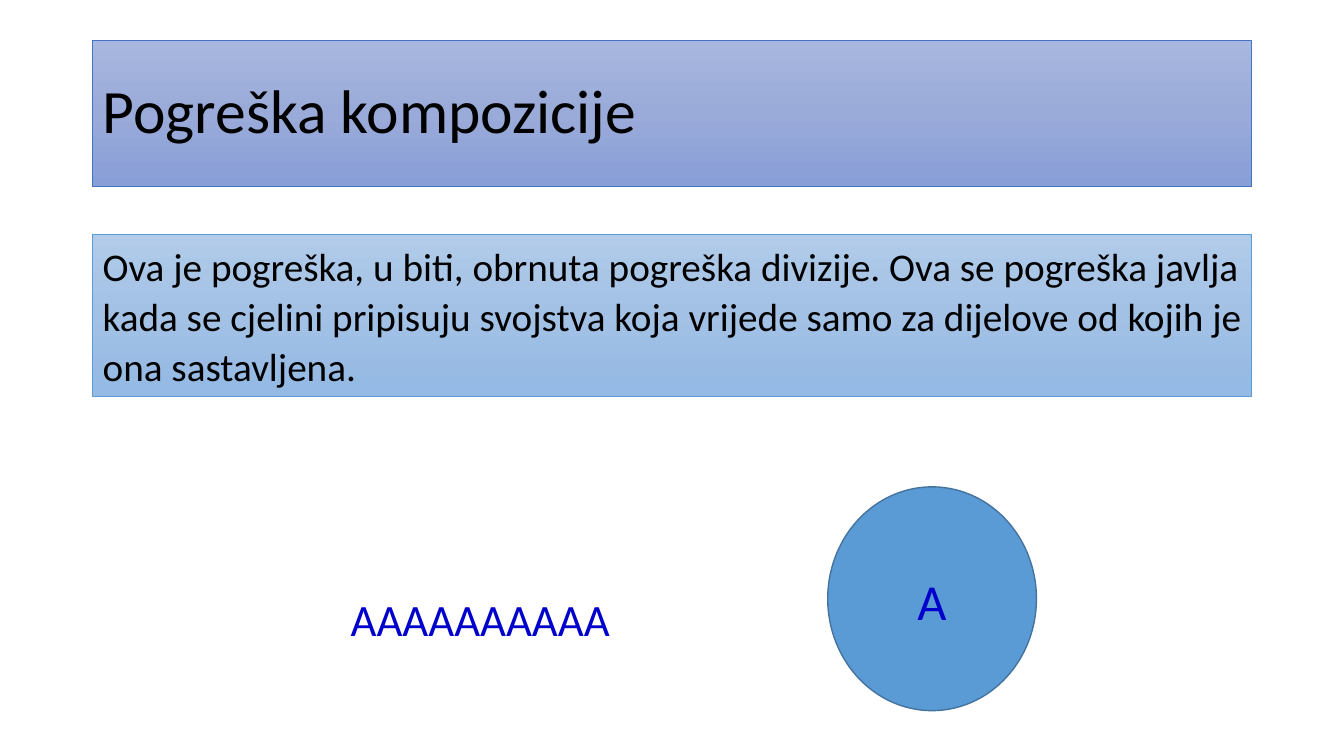
import copy

import pptx
import pptx.dml.color
import pptx.enum.shapes
import pptx.enum.text
import pptx.util

SLIDE_W, SLIDE_H = 13.33, 7.5
MARGIN = 0.92
CONTENT_W = SLIDE_W - 2 * MARGIN
FONT = "Calibri"
COLORS = {
    "text": "000000",
    "letter": "0000CC",
    "title_line": "4472C4",
    "definition_line": "5B9BD5",
    "whole": "5B9BD5",
    "whole_line": "43739E",
}
GRADIENTS = {
    "title": ("A8B7DF", "9AABD9", "889ED7"),
    "definition": ("B1CBE9", "A3C1E5", "93B9E4"),
}
ALIGN = pptx.enum.text.PP_ALIGN
ANCHOR = pptx.enum.text.MSO_ANCHOR
AUTO_SIZE = pptx.enum.text.MSO_AUTO_SIZE
SHAPE = pptx.enum.shapes.MSO_SHAPE


def rgb(name):
    return pptx.dml.color.RGBColor.from_string(COLORS.get(name, name))


def inches(box):
    return [pptx.util.Inches(length) for length in box]


def outline(part, color, width):
    part.line.color.rgb = rgb(color)
    part.line.width = pptx.util.Pt(width)


def shade(part, gradient):
    part.fill.gradient()
    part.fill.gradient_angle = 270
    first = part.fill._fill._gradFill.gsLst[0]
    first.addnext(copy.deepcopy(first))
    for index, (stop, color) in enumerate(zip(part.fill.gradient_stops, GRADIENTS[gradient])):
        stop.position = index / 2
        stop.color.rgb = rgb(color)


def write(part, text, size, color, anchor=ANCHOR.TOP, align=ALIGN.LEFT, spacing=1.0,
          wrap=True, auto_size=AUTO_SIZE.NONE):
    frame = part.text_frame
    frame.text = text
    frame.word_wrap = wrap
    frame.auto_size = auto_size
    frame.vertical_anchor = anchor
    paragraph = frame.paragraphs[0]
    paragraph.alignment = align
    paragraph.line_spacing = spacing
    font = paragraph.runs[0].font
    font.name = FONT
    font.size = pptx.util.Pt(size)
    font.color.rgb = rgb(color)


def add_title(slide, box):
    title = slide.shapes.title
    title.left, title.top, title.width, title.height = inches(box)
    shade(title, "title")
    outline(title, "title_line", 0.5)
    write(title, "Pogreška kompozicije", 44, "text", ANCHOR.MIDDLE, spacing=0.9)


def add_definition(slide, box):
    definition = slide.shapes.add_shape(SHAPE.RECTANGLE, *inches(box))
    definition.shadow.inherit = False
    shade(definition, "definition")
    outline(definition, "definition_line", 0.5)
    write(definition,
          "Ova je pogreška, u biti, obrnuta pogreška divizije. Ova se pogreška javlja "
          "kada se cjelini pripisuju svojstva koja vrijede samo za dijelove od kojih je "
          "ona sastavljena.",
          28, "text", spacing=1.06, auto_size=AUTO_SIZE.SHAPE_TO_FIT_TEXT)


def add_illustration(slide, box):
    left, top, width, height = box
    whole_w = 0.3 * width
    whole = slide.shapes.add_shape(
        SHAPE.OVAL, *inches((left + width - whole_w, top, whole_w, height)))
    whole.shadow.inherit = False
    whole.fill.solid()
    whole.fill.fore_color.rgb = rgb("whole")
    outline(whole, "whole_line", 1)
    write(whole, "A", 36, "letter", ANCHOR.MIDDLE, ALIGN.CENTER, 1.06)
    whole.text_frame.paragraphs[0].space_after = pptx.util.Pt(8)

    members = slide.shapes.add_textbox(
        *inches((left, top + 0.445 * height, 0.406 * width, 0.64)))
    write(members, "AAAAAAAAAA", 32, "letter", wrap=False,
          auto_size=AUTO_SIZE.SHAPE_TO_FIT_TEXT)


def main():
    deck = pptx.Presentation()
    deck.slide_width, deck.slide_height = inches((SLIDE_W, SLIDE_H))
    slide = deck.slides.add_slide(deck.slide_layouts.get_by_name("Title Only"))
    add_title(slide, (MARGIN, 0.4, CONTENT_W, 1.45))
    add_definition(slide, (MARGIN, 2.33, CONTENT_W, 1.6))
    add_illustration(slide, (3.38, 4.83, 6.9, 2.22))
    deck.save("out.pptx")


if __name__ == "__main__":
    main()
